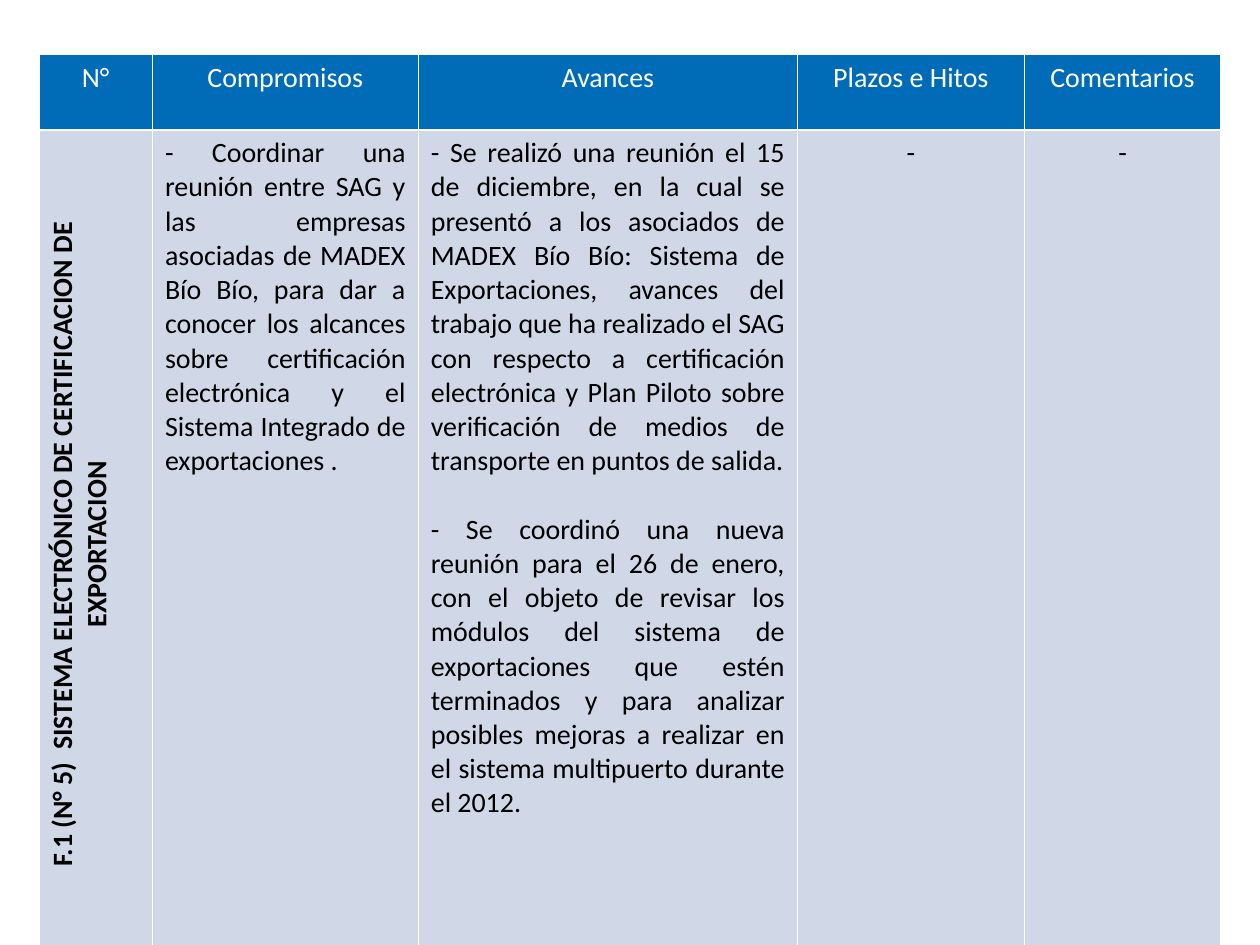
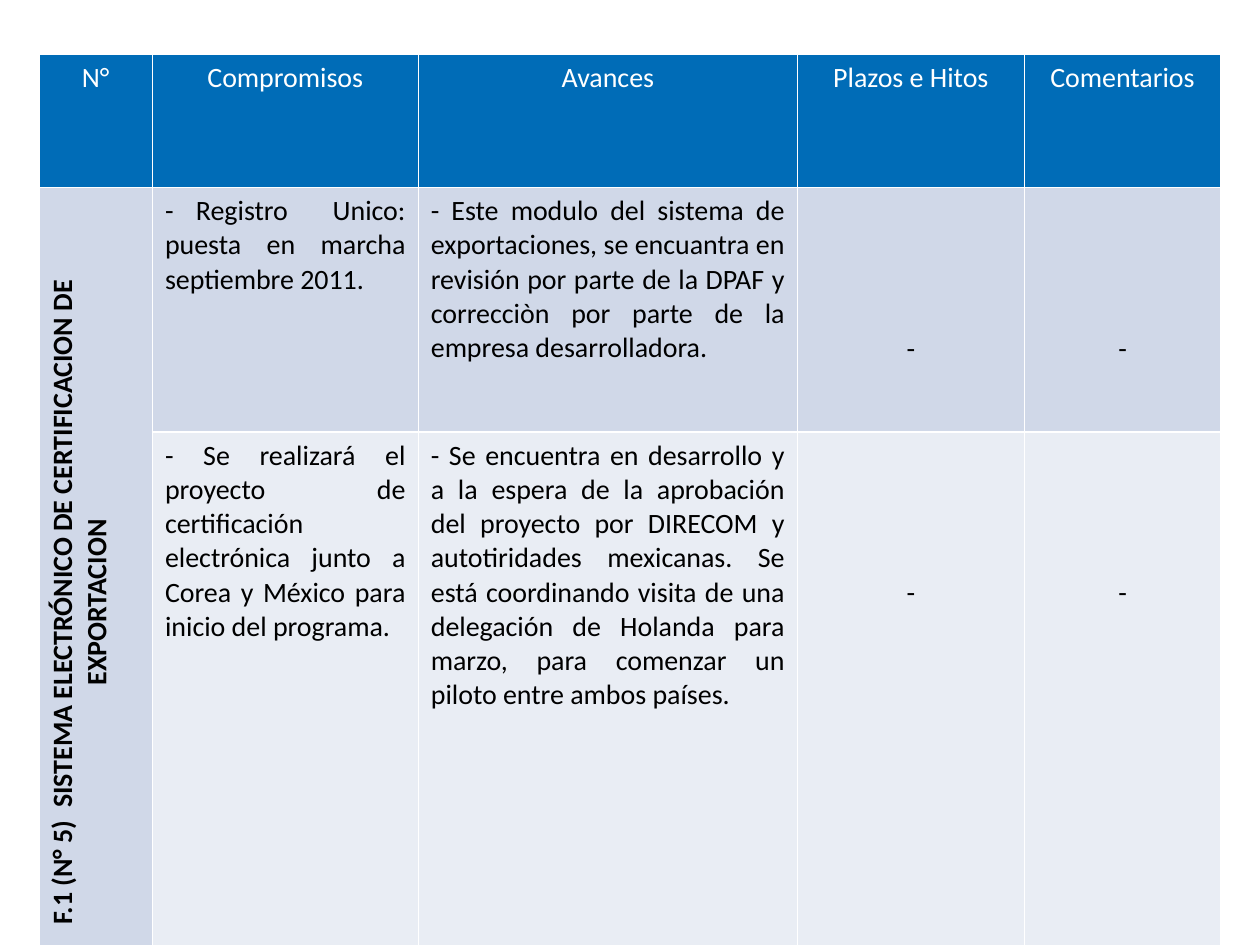
from lxml.etree import SubElement
from pptx import Presentation
from pptx.dml.color import RGBColor
from pptx.enum.text import PP_ALIGN
from pptx.oxml.ns import qn
from pptx.util import Inches, Pt

HEADER_BLUE = RGBColor(0x00, 0x6C, 0xB7)
BAND_DARK = RGBColor(0xD0, 0xD8, 0xE8)
BAND_LIGHT = RGBColor(0xE9, 0xED, 0xF4)
WHITE = RGBColor(0xFF, 0xFF, 0xFF)
BLACK = RGBColor(0x00, 0x00, 0x00)

FONT = "Calibri"
HEADERS = ["N°", "Compromisos", "Avances", "Plazos e Hitos", "Comentarios"]
COLUMN_WIDTHS = [0.9, 2.11, 3.01, 1.8, 1.56]
TOPIC = "F.1 (N° 5)  SISTEMA ELECTRÓNICO DE CERTIFICACION DE EXPORTACION"
PARAGRAPH_GAP = Pt(19.5)

# Each row holds a commitment and the paragraphs of its progress;
# dash_top is the top margin of the cells that only hold a dash.
SLIDES = [
    {
        "heights": [0.6, 5.73],
        "dash_top": 0.05,
        "rows": [
            (
                "- Coordinar una reunión entre SAG y las empresas asociadas de MADEX Bío Bío, "
                "para dar a conocer los alcances sobre certificación electrónica y el Sistema "
                "Integrado de exportaciones .",
                [
                    " Se realizó una reunión el 15 de diciembre, en la cual se presentó a los "
                    "asociados de MADEX Bío Bío: Sistema de Exportaciones, avances del trabajo que "
                    "ha realizado el SAG con respecto a certificación electrónica y Plan Piloto "
                    "sobre verificación de medios de transporte en puntos de salida.",
                    "- Se coordinó una nueva reunión para el 26 de enero, con el objeto de revisar "
                    "los módulos del sistema de exportaciones que estén terminados y para analizar "
                    "posibles mejoras a realizar en el sistema multipuerto durante el 2012.",
                ],
            ),
        ],
    },
    {
        "heights": [1.06, 1.94, 2.89],
        "dash_top": 1.14,
        "rows": [
            (
                "- Registro  Unico: puesta en marcha septiembre 2011.",
                [
                    " Este modulo del sistema de exportaciones, se encuantra en revisión por parte "
                    "de la DPAF y correcciòn por parte de la empresa desarrolladora.",
                ],
            ),
            (
                "- Se realizará el proyecto de certificación electrónica junto a Corea y México "
                "para inicio del programa.",
                [
                    " Se encuentra en desarrollo y a la espera de la aprobación del proyecto por "
                    "DIRECOM y autotiridades mexicanas. Se está coordinando visita de una "
                    "delegación de Holanda para marzo, para comenzar un piloto entre ambos países.",
                ],
            ),
        ],
    },
]


def fill_cell(cell, texts, fill, color=BLACK, align=PP_ALIGN.CENTER, bold=False):
    cell.fill.solid()
    cell.fill.fore_color.rgb = fill
    cell.text = "\n".join(texts)
    for index, paragraph in enumerate(cell.text_frame.paragraphs):
        paragraph.alignment = align
        paragraph.font.name = FONT
        paragraph.font.size = Pt(16)
        paragraph.font.bold = bold
        paragraph.font.color.rgb = color
        if index:
            paragraph.space_before = PARAGRAPH_GAP


def add_dash_bullet(paragraph):
    properties = paragraph._p.get_or_add_pPr()
    properties.set("marL", "0")
    properties.set("indent", "0")
    SubElement(properties, qn("a:buFont")).set("typeface", FONT)
    SubElement(properties, qn("a:buChar")).set("char", "-")
    # Bullets must come before the default run properties
    properties.append(properties.find(qn("a:defRPr")))


presentation = Presentation()
presentation.slide_width = Inches(10)
presentation.slide_height = Inches(7.5)

for content in SLIDES:
    slide = presentation.slides.add_slide(presentation.slide_layouts[6])
    heights = content["heights"]
    table = slide.shapes.add_table(
        len(heights), len(HEADERS), Inches(0.31), Inches(0.43),
        Inches(sum(COLUMN_WIDTHS)), Inches(sum(heights)),
    ).table
    for column, width in zip(table.columns, COLUMN_WIDTHS):
        column.width = Inches(width)
    for row, height in zip(table.rows, heights):
        row.height = Inches(height)

    for index, header in enumerate(HEADERS):
        fill_cell(table.cell(0, index), [header], HEADER_BLUE, WHITE)

    topic_cell = table.cell(1, 0)
    if len(heights) > 2:
        topic_cell.merge(table.cell(len(heights) - 1, 0))
    fill_cell(topic_cell, [TOPIC], BAND_DARK, bold=True)
    topic_cell._tc.get_or_add_tcPr().set("vert", "vert270")

    for index, (commitment, progress) in enumerate(content["rows"], start=1):
        band = BAND_DARK if index % 2 else BAND_LIGHT
        fill_cell(table.cell(index, 1), [commitment], band, align=PP_ALIGN.JUSTIFY)
        progress_cell = table.cell(index, 2)
        fill_cell(progress_cell, progress, band, align=PP_ALIGN.JUSTIFY)
        add_dash_bullet(progress_cell.text_frame.paragraphs[0])
        for column_index in (3, 4):
            dash_cell = table.cell(index, column_index)
            fill_cell(dash_cell, ["-"], band)
            dash_cell.margin_top = Inches(content["dash_top"])

presentation.save("out.pptx")
